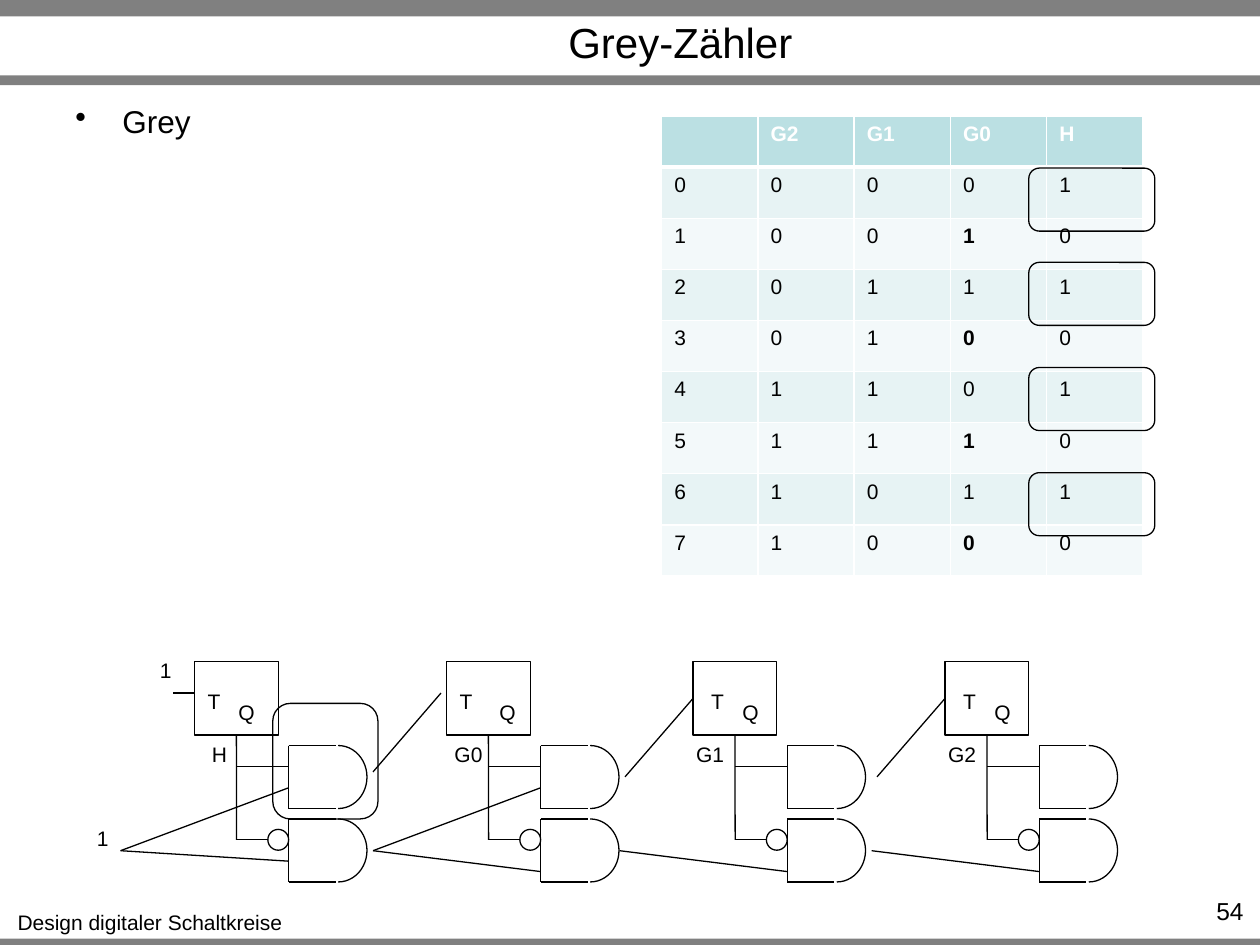
from dataclasses import dataclass
from typing import NamedTuple, Optional

from lxml.etree import SubElement
from pptx import Presentation
from pptx.dml.color import RGBColor
from pptx.enum.shapes import MSO_CONNECTOR, MSO_SHAPE
from pptx.enum.text import MSO_ANCHOR, PP_ALIGN
from pptx.oxml import parse_xml
from pptx.oxml.ns import nsdecls, qn
from pptx.util import Cm, Pt


@dataclass(frozen=True)
class Theme:
    font: str = "Arial"
    ink: str = "000000"
    paper: str = "FFFFFF"
    bar: str = "808080"
    header: str = "BBE0E3"
    bands: tuple = ("E7F3F4", "F3F9FA")
    title: int = 24
    body: int = 18
    page: int = 14
    label: int = 12
    line: float = 0.75


class Box(NamedTuple):
    """A frame in centimetres."""
    left: float
    top: float
    width: float
    height: float

    def lengths(self) -> list:
        return [Cm(value) for value in self]


class Stage(NamedTuple):
    """A flip-flop with its two gates; text positions count from its left."""
    left: float
    output: str
    output_shift: float
    t_shift: float
    q_shift: float


class Wire(NamedTuple):
    """A line; with a target stage it ends at that flip-flop's left side."""
    start: tuple
    end: tuple
    target: Optional[int] = None


THEME = Theme()
BARS = [Box(0, 18.92, 25.4, 0.13), Box(0, 0, 25.4, 0.33), Box(0, 1.52, 25.4, 0.2)]

FLIP_FLOP_TOP, FLIP_FLOP_WIDTH, FLIP_FLOP_HEIGHT = 13.34, 1.69, 1.48
STEM, GATE, BUBBLE = 0.85, 1.9, 1.48
UPPER_GATE, LOWER_GATE, GATE_HEIGHT = 15.03, 16.51, 1.27
UPPER_INPUT, LOWER_INPUT = 15.45, 16.93
BUBBLE_SIZE = 0.42
LABEL_HEIGHT = 0.76

STAGES = [
    Stage(3.92, "H", 0.1, 0, 0.63),
    Stage(9, "G0", -0.1, 0, 0.81),
    Stage(13.97, "G1", -0.2, 0.1, 0.74),
    Stage(19.05, "G2", -0.2, 0.1, 0.74),
]
WIRES = [
    Wire((3.49, 13.97), (3.92, 13.97)),
    Wire((2.43, 17.15), (5.82, 17.36)),
    Wire((2.43, 17.15), (5.82, 15.88)),
    Wire((7.52, 17.15), (10.9, 17.57)),
    Wire((7.52, 17.15), (10.9, 15.88)),
    Wire((7.52, 15.56), (8.89, 13.97)),
    Wire((12.49, 17.15), (15.87, 17.57)),
    Wire((17.57, 17.15), (20.95, 17.57)),
    Wire((12.6, 15.66), (13.97, 14.08), 2),
    Wire((17.68, 15.66), (19.05, 14.08), 3),
]
RINGS = [Box(20.74, top, 2.54, 1.27) for top in (3.39, 5.29, 7.41, 9.53)]
RINGS.append(Box(5.5, 14.18, 2.12, 2.33))


def color(value: str) -> RGBColor:
    return RGBColor.from_string(value)


def format_text(paragraph, size: int, ink: str = THEME.ink, bold: bool = False) -> None:
    for run in paragraph.runs:
        run.font.name = THEME.font
        run.font.size = Pt(size)
        run.font.bold = bold
        run.font.color.rgb = color(ink)


def add_text(slide, box: Box, text: str, size: int = THEME.label,
             align=PP_ALIGN.CENTER, wrap: bool = False, anchor=MSO_ANCHOR.TOP):
    shape = slide.shapes.add_textbox(*box.lengths())
    shape.text_frame.word_wrap = wrap
    shape.text_frame.vertical_anchor = anchor
    shape.text_frame.text = text
    paragraph = shape.text_frame.paragraphs[0]
    paragraph.alignment = align
    format_text(paragraph, size)
    return paragraph


def add_outline(shapes, kind, box: Box):
    shape = shapes.add_shape(kind, *box.lengths())
    shape.shadow.inherit = False
    shape.fill.background()
    shape.line.color.rgb = color(THEME.ink)
    shape.line.width = Pt(THEME.line)
    return shape


def add_line(shapes, start: tuple, end: tuple):
    ends = [Cm(value) for value in (*start, *end)]
    connector = shapes.add_connector(MSO_CONNECTOR.STRAIGHT, *ends)
    connector.line.color.rgb = color(THEME.ink)
    connector.line.width = Pt(THEME.line)
    SubElement(connector.element.spPr, qn("a:effectLst"))
    return connector


def add_gate(slide, left: float, top: float) -> None:
    shapes = slide.shapes.add_group_shape().shapes
    bottom = top + GATE_HEIGHT
    for y in (top, bottom):
        add_line(shapes, (left, y), (left + 0.95, y))
    arc = add_outline(shapes, MSO_SHAPE.ARC, Box(left + 0.42, top, 1.16, GATE_HEIGHT))
    arc.adjustments[0] = 162  # from 270 degrees
    arc.adjustments[1] = 54   # to 90 degrees
    add_line(shapes, (left, top), (left, bottom))


def add_stage(slide, stage: Stage):
    left, shapes = stage.left, slide.shapes
    flip_flop = add_outline(shapes, MSO_SHAPE.RECTANGLE,
                            Box(left, FLIP_FLOP_TOP, FLIP_FLOP_WIDTH, FLIP_FLOP_HEIGHT))
    for top in (UPPER_GATE, LOWER_GATE):
        add_gate(slide, left + GATE, top)
    add_outline(shapes, MSO_SHAPE.OVAL, Box(left + BUBBLE, LOWER_INPUT - BUBBLE_SIZE / 2,
                                            BUBBLE_SIZE, BUBBLE_SIZE))
    stem = left + STEM
    output = add_line(shapes, (stem, FLIP_FLOP_TOP + FLIP_FLOP_HEIGHT), (stem, LOWER_INPUT))
    output.begin_connect(flip_flop, 2)
    add_line(shapes, (stem, UPPER_INPUT), (left + GATE, UPPER_INPUT))
    add_line(shapes, (stem, LOWER_INPUT), (left + BUBBLE, LOWER_INPUT))
    add_text(slide, Box(left + stage.t_shift, 13.76, 0.79, LABEL_HEIGHT), "T")
    add_text(slide, Box(left + stage.q_shift, 13.97, 0.84, LABEL_HEIGHT), "Q")
    add_text(slide, Box(left + stage.output_shift, 14.82,
                        0.81 if len(stage.output) == 1 else 1.09, LABEL_HEIGHT), stage.output)
    return flip_flop


def set_borders(cell, top: float, bottom: float) -> None:
    sides = (("L", 1), ("R", 1), ("T", top), ("B", bottom))
    for index, (side, width) in enumerate(sides):
        cell._tc.get_or_add_tcPr().insert(index, parse_xml(
            f'<a:ln{side} {nsdecls("a")} w="{Pt(width)}"><a:solidFill>'
            f'<a:srgbClr val="{THEME.paper}"/></a:solidFill></a:ln{side}>'))


def add_state_table(slide) -> None:
    rows = [["", "G2", "G1", "G0", "H"]]
    rows += [[str(n), *f"{n ^ n >> 1:03b}", str(1 - n % 2)] for n in range(8)]
    box = Box(13.34, 2.34, 9.7, 9.27)
    table = slide.shapes.add_table(len(rows), len(rows[0]), *box.lengths()).table
    for column in table.columns:
        column.width = Cm(box.width / len(rows[0]))
    for row_index, values in enumerate(rows):
        table.rows[row_index].height = Cm(box.height / len(rows))
        header = row_index == 0
        for column_index, value in enumerate(values):
            cell = table.cell(row_index, column_index)
            cell.fill.solid()
            cell.fill.fore_color.rgb = color(
                THEME.header if header else THEME.bands[(row_index - 1) % 2])
            set_borders(cell, 3 if row_index == 1 else 1, 3 if header else 1)
            cell.text_frame.text = value
            toggled = column_index == 3 and row_index % 2 == 0
            format_text(cell.text_frame.paragraphs[0], THEME.label,
                        THEME.paper if header else THEME.ink, header or toggled)


def main() -> None:
    presentation = Presentation()
    presentation.slide_width, presentation.slide_height = Cm(25.4), Cm(19.05)
    slide = presentation.slides.add_slide(presentation.slide_layouts[6])

    # Frame bars, title and footer
    for box in BARS:
        bar = slide.shapes.add_shape(MSO_SHAPE.RECTANGLE, *box.lengths())
        bar.shadow.inherit = False
        bar.fill.solid()
        bar.fill.fore_color.rgb = color(THEME.bar)
        bar.line.fill.background()
    add_text(slide, Box(0.08, 18.21, 5.89, LABEL_HEIGHT), "Design digitaler Schaltkreise")
    add_text(slide, Box(3.3, 0.36, 20.83, 0.97), "Grey-Zähler", THEME.title,
             wrap=True, anchor=MSO_ANCHOR.MIDDLE)
    add_text(slide, Box(23.11, 17.93, 2.21, 0.61), "54", THEME.page, PP_ALIGN.RIGHT, True)

    # Bullet
    bullet = add_text(slide, Box(1.27, 1.93, 22.86, 1.88), "Grey", THEME.body,
                      PP_ALIGN.LEFT, True)
    properties = bullet._p.get_or_add_pPr()
    properties.set("marL", str(Cm(0.95)))
    properties.set("indent", str(-Cm(0.95)))
    SubElement(properties, qn("a:buChar")).set("char", "•")

    # State table
    add_state_table(slide)

    # Counter circuit
    flip_flops = [add_stage(slide, stage) for stage in STAGES]
    for wire in WIRES:
        connector = add_line(slide.shapes, wire.start, wire.end)
        if wire.target is not None:
            connector.end_connect(flip_flops[wire.target], 1)
    for left, top in ((1.7, 16.51), (2.97, 13.13)):
        add_text(slide, Box(left, top, 0.74, LABEL_HEIGHT), "1")

    # Highlight rings
    for box in RINGS:
        add_outline(slide.shapes, MSO_SHAPE.ROUNDED_RECTANGLE, box)

    presentation.save("out.pptx")


if __name__ == "__main__":
    main()
